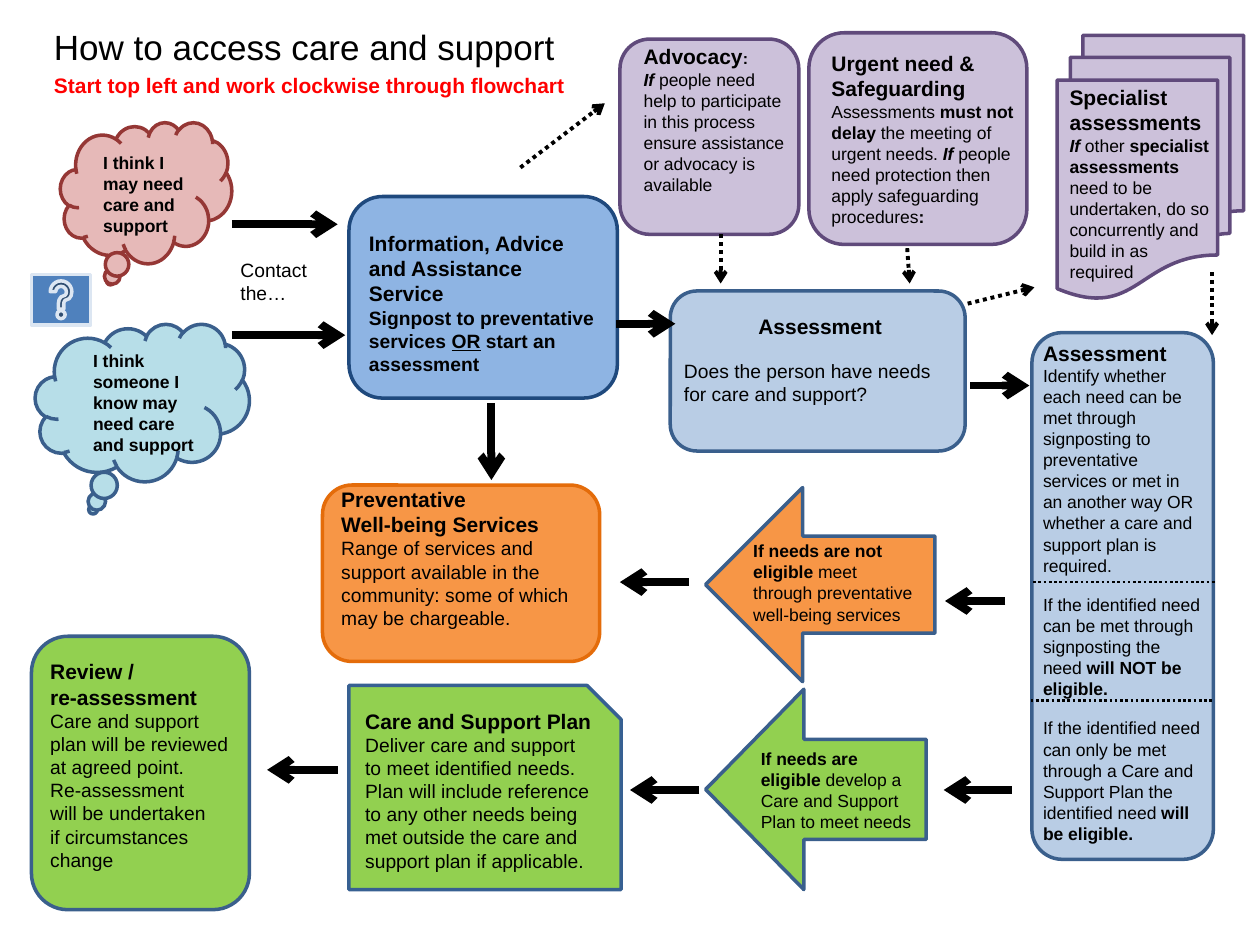
from lxml.etree import SubElement
from pptx import Presentation
from pptx.dml.color import RGBColor
from pptx.enum.dml import MSO_LINE
from pptx.enum.shapes import MSO_CONNECTOR, MSO_SHAPE as SH
from pptx.enum.text import MSO_AUTO_SIZE, PP_ALIGN
from pptx.oxml.ns import qn
from pptx.util import Inches, Pt

prs = Presentation()
prs.slide_width, prs.slide_height = Inches(10), Inches(7.5)
slide = prs.slides.add_slide(prs.slide_layouts[6])
COL, ROW = prs.slide_width / 100, prs.slide_height / 75


def rgb(value):
    return RGBColor.from_string(value)


def grid(x, y, *size):
    """Turn columns and rows (x, y, then width, height or x, y) into lengths."""
    return [int(v * unit) for v, unit in zip((x, y, *size), (COL, ROW) * 2)]


# Palette
NAVY, PURPLE, LILAC = "3A5F8C", "604A7B", "CCC1DA"
PALE, GREEN, ORANGE = "B9CDE5", "92D050", "F79646"

# Shapes: preset, place in the grid, fill, outline, adjustments, rotation
shapes = [
    (SH.DOWN_ARROW, (56.8, 53.9, 15.9, 17.5), GREEN, NAVY, (0.5, 0.49), 90),
    (SH.CLOUD_CALLOUT, (4.8, 9.7, 13.6, 11.2), "E6B9B8", "953735", (), 0),
    (SH.ROUNDED_RECTANGLE, (27.7, 15.6, 21.3, 16), "8EB4E3", "1F497D", (), 0),
    (SH.ROUNDED_RECTANGLE, (53.2, 23.1, 23.4, 12.7), PALE, NAVY, (), 0),
    (SH.FLOWCHART_MULTIDOCUMENT, (83.9, 2.8, 14.8, 20.9), LILAC, PURPLE, (), 0),
    (SH.ROUNDED_RECTANGLE, (25.6, 38.5, 22, 14), ORANGE, "E46C0A", (), 0),
    (SH.CLOUD_CALLOUT, (2.8, 25.7, 17, 12.5), "B7DEE8", NAVY, (-0.23, 0.68), 0),
    (SH.ACTION_BUTTON_HELP, (2.5, 21.8, 4.7, 4), "4F81BD", "DCE6F2", (), 0),
    (SH.SNIP_1_RECTANGLE, (27.7, 54.4, 21.6, 16.2), GREEN, "376092", (), 0),
    (SH.ROUNDED_RECTANGLE, (2.5, 50.5, 17.3, 21.7), GREEN, NAVY, (), 0),
    (SH.ROUNDED_RECTANGLE, (81.9, 26.4, 14.4, 41.8), PALE, NAVY, (), 0),
    (SH.LEFT_ARROW, (56, 38.7, 18.2, 15.4), ORANGE, NAVY, (), 0),
    (SH.ROUNDED_RECTANGLE, (49.2, 3.1, 14.2, 15.5), LILAC, PURPLE, (), 0),
    (SH.ROUNDED_RECTANGLE, (64.2, 2.6, 17.3, 16.8), LILAC, PURPLE, (), 0),
]
for preset, place, fill, outline, adjustments, rotation in shapes:
    s = slide.shapes.add_shape(preset, *grid(*place))
    s.shadow.inherit = False
    s.rotation = rotation
    s.fill.solid()
    s.fill.fore_color.rgb = rgb(fill)
    s.line.color.rgb = rgb(outline)
    s.line.width = Pt(2)
    for i, value in enumerate(adjustments):
        s.adjustments[i] = value

# Run formats
TITLE = {"size": Pt(20)}
HEAD = {"size": Pt(12), "bold": True}
BODY = {"size": Pt(11), "bold": False}
BODY_B = BODY | {"bold": True}
BODY_U = BODY_B | {"underline": True}
NOTE = {"size": Pt(10), "bold": False}
NOTE_B = NOTE | {"bold": True}
NOTE_BI = NOTE_B | {"italic": True}
SMALL_B = {"size": Pt(9), "bold": True}

# Texts: place in the grid, colour, paragraphs of (paragraph format, runs)
LEFT = {}
CENTRE = {"alignment": PP_ALIGN.CENTER}
BLACK = "000000"
texts = [
    ((3.3, 1.5, 47.4, 4.4), BLACK, [
        (LEFT, [("How to access care and support", TITLE)])]),
    ((3.3, 5.3, 43.7, 3), "FF0000", [
        (LEFT, [("Start top left and work clockwise through flowchart", HEAD)])]),
    ((7.2, 11.6, 8.9, 7.7), BLACK, [
        (LEFT, [("I think I may need care and support", NOTE_B)])]),
    ((6.4, 27.3, 10.5, 9.4), BLACK, [
        (LEFT, [("I think someone I know may need care and support", NOTE_B)])]),
    ((18.1, 20, 7.5, 4.7), BLACK, [(LEFT, [("Contact the…", BODY)])]),
    ((28.3, 17.8, 20.4, 12.6), BLACK, [
        (LEFT, [("Information, Advice and Assistance Service", HEAD)]),
        (LEFT, [("Signpost to preventative services ", BODY_B), ("OR", BODY_U),
                (" start an assessment", BODY_B)])]),
    ((50.1, 3, 13.3, 14.8), BLACK, [
        (LEFT, [("Advocacy", HEAD), (":", SMALL_B)]),
        (LEFT, [("If ", NOTE_BI),
                ("people need help to participate in this process ensure "
                 "assistance or advocacy is available", NOTE)])]),
    ((65, 3.5, 16.5, 15.1), BLACK, [
        (LEFT, [("Urgent need & Safeguarding", HEAD)]),
        (LEFT, [("Assessments ", NOTE), ("must not delay ", NOTE_B),
                ("the meeting of urgent needs. ", NOTE), ("If ", NOTE_BI),
                ("people need protection then apply safeguarding procedures", NOTE),
                (":", NOTE_B)])]),
    ((83.9, 6.2, 13.4, 16.8), BLACK, [
        (LEFT, [("Specialist assessments", HEAD)]),
        (LEFT, [("If", NOTE_BI), (" other ", NOTE),
                ("specialist assessments ", NOTE_B),
                ("need to be undertaken, do so concurrently and build in "
                 "as required", NOTE)])]),
    ((53.3, 24.4, 23.6, 8.4), BLACK, [
        (CENTRE, [("Assessment", HEAD)]),
        ({"space_before": Pt(11.5)},
         [("Does the person have needs for care and support?", BODY)])]),
    ((81.8, 26.5, 14.7, 41.4), BLACK, [
        (LEFT, [("Assessment", HEAD)]),
        (LEFT, [("Identify whether each need can be met through signposting to "
                 "preventative services or met in an another way OR whether a "
                 "care and support plan is required.", NOTE)]),
        ({"space_before": Pt(10.5)},
         [("If the identified need can be met through signposting the need ", NOTE),
          ("will NOT be eligible.", NOTE_B)]),
        ({"space_before": Pt(10.5)},
         [("If the identified need can only be met through a Care and Support "
           "Plan the identified need ", NOTE), ("will be eligible.", NOTE_B)])]),
    ((58.8, 42.4, 15.4, 7.7), BLACK, [
        (LEFT, [("If needs are not eligible ", NOTE_B),
                ("meet\nthrough preventative\nwell-being services", NOTE)])]),
    ((59.4, 58.9, 14, 7.7), BLACK, [
        (LEFT, [("If needs are eligible ", NOTE_B),
                ("develop a Care and Support Plan to meet needs", NOTE)])]),
    ((26.1, 38.1, 20.5, 12.5), BLACK, [
        (LEFT, [("Preventative\nWell-being Services", HEAD)]),
        (LEFT, [("Range of services and support available in the community: "
                 "some of which may be chargeable.", BODY)])]),
    ((28, 55.7, 20.3, 14.1), BLACK, [
        (LEFT, [("Care and Support Plan", HEAD)]),
        (LEFT, [("Deliver care and support to meet identified needs.", BODY)]),
        (LEFT, [("Plan will include reference to any other needs being met "
                 "outside the care and support plan if applicable.", BODY)])]),
    ((3, 51.8, 16.7, 18), BLACK, [
        (LEFT, [("Review /", HEAD)]),
        (LEFT, [("re-assessment", HEAD)]),
        (LEFT, [("Care and support plan will be reviewed at agreed point.", BODY)]),
        (LEFT, [("Re-assessment\nwill be undertaken\nif circumstances change",
                 BODY)])]),
]
for place, colour, paragraphs in texts:
    tf = slide.shapes.add_textbox(*grid(*place)).text_frame
    tf.word_wrap = True
    tf.auto_size = MSO_AUTO_SIZE.SHAPE_TO_FIT_TEXT
    for n, (layout, runs) in enumerate(paragraphs):
        p = tf.add_paragraph() if n else tf.paragraphs[0]
        for name, value in layout.items():
            setattr(p, name, value)
        for text, style in runs:
            for i, line in enumerate(text.split("\n")):
                if i:
                    p.add_line_break()
                r = p.add_run()
                r.text = line
                r.font.name = "Arial"
                r.font.color.rgb = rgb(colour)
                for name, value in style.items():
                    setattr(r.font, name, value)

# Lines: width, dotted, arrowhead, then start and end in the grid
line_groups = [
    (4.5, False, True, [
        (18.4, 17.8, 26.8, 17.8), (18.4, 26.6, 27.4, 26.6),
        (48.9, 25.7, 53.6, 25.7), (77, 30.6, 81.7, 30.6),
        (39, 32, 39, 38.1), (54.7, 46.2, 49.2, 46.2),
        (79.8, 47.7, 75, 47.7), (80.3, 62.7, 74.9, 62.7),
        (55.5, 62.7, 50, 62.7), (26.8, 61.1, 21.2, 61.1)]),
    (2.25, True, True, [
        (41.3, 13.3, 48, 8.2), (57.2, 18.6, 57.2, 22.5),
        (72, 19.7, 72.2, 22.5), (76.8, 24.1, 82.1, 22.8),
        (96.2, 21.6, 96.2, 26.6)]),
    (1.5, True, False, [(82, 46.2, 96.4, 46.2), (81.8, 55.6, 96.3, 55.6)]),
]
for width, dotted, arrow, ends in line_groups:
    for points in ends:
        s = slide.shapes.add_connector(MSO_CONNECTOR.STRAIGHT, *grid(*points))
        s.line.color.rgb = rgb(BLACK)
        s.line.width = Pt(width)
        if dotted:
            s.line.dash_style = MSO_LINE.ROUND_DOT
        sp_pr = s._element.spPr
        if arrow:
            SubElement(sp_pr.find(qn("a:ln")), qn("a:tailEnd"), type="arrow")
        SubElement(sp_pr, qn("a:effectLst"))

prs.save("out.pptx")
